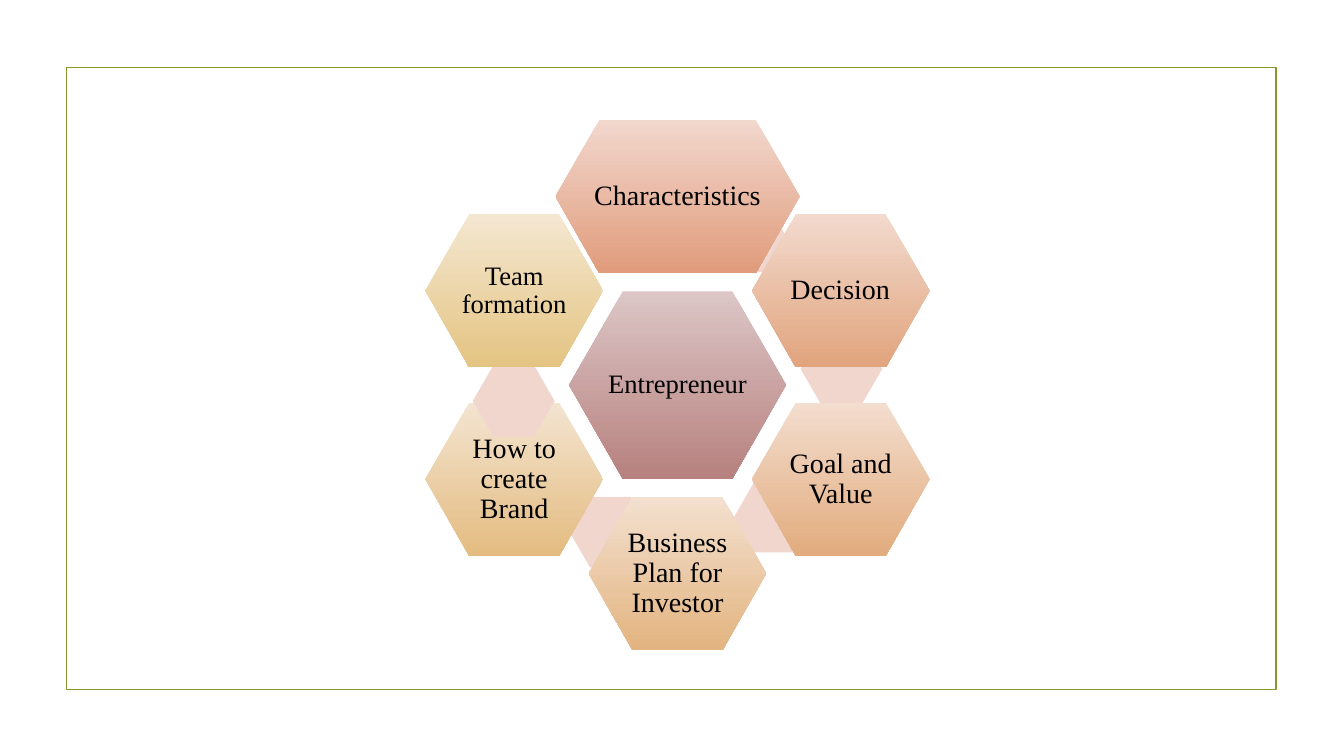
import math
from dataclasses import dataclass

from pptx import Presentation
from pptx.dml.color import RGBColor
from pptx.enum import shapes, text
from pptx.util import Inches, Pt

FONT = "Times New Roman"
CENTER_X, CENTER_Y = 6.72, 3.82
RING_RADIUS = 1.87
TOPIC_HEIGHT = 1.52
ACCENT_SIZE = (0.81, 0.7)


@dataclass
class Topic:
    label: str
    top_color: str
    bottom_color: str
    accent_at: tuple[float, float]
    width: float = 1.76
    size: float = 20


# Clockwise from the top of the ring
TOPICS = [
    Topic("Characteristics", "F2D7CD", "E09C7C", (6.99, 2.0), width=2.42),
    Topic("Decision\t", "F2DACE", "E1A47D", (7.94, 3.31)),
    Topic("Goal and Value", "F3DDCE", "E2AC7E", (7.28, 4.78)),
    Topic("Business Plan for Investor", "F3E0CF", "E3B480", (5.65, 4.93)),
    Topic("How to create Brand", "F3E4D0", "E4BC81", (4.69, 3.63)),
    Topic("Team formation", "F4E7D1", "E4C482", (4.22 + 0.47, 3.63), size=19),
]


def rgb(value: str) -> RGBColor:
    return RGBColor.from_string(value)


def add_shape(slide, kind, x: float, y: float, w: float, h: float):
    sp = slide.shapes.add_shape(kind, Inches(x), Inches(y), Inches(w), Inches(h))
    sp.shadow.inherit = False
    return sp


def add_hexagon(slide, x: float, y: float, w: float, h: float,
                colors: list[str], adj: float = 0.286):
    """Draw a borderless hexagon: one colour is solid, two run top to bottom."""
    sp = add_shape(slide, shapes.MSO_SHAPE.HEXAGON, x, y, w, h)
    sp.adjustments[0] = adj
    sp.line.fill.background()
    if len(colors) == 1:
        sp.fill.solid()
        sp.fill.fore_color.rgb = rgb(colors[0])
    else:
        sp.fill.gradient()
        sp.fill.gradient_angle = 270
        for stop, position, color in zip(sp.fill.gradient_stops, (0, 1), colors):
            stop.position = position
            stop.color.rgb = rgb(color)
    return sp


def set_text(sp, label: str, *, size: float, color: str = "000000") -> None:
    tf = sp.text_frame
    tf.word_wrap = True
    tf.vertical_anchor = text.MSO_ANCHOR.MIDDLE
    tf.margin_left = tf.margin_right = Inches(0.03)
    tf.margin_top = tf.margin_bottom = Inches(0.03)
    p = tf.paragraphs[0]
    p.alignment = text.PP_ALIGN.CENTER
    p.line_spacing = 0.9
    r = p.add_run()
    r.text = label
    r.font.name = FONT
    r.font.size = Pt(size)
    r.font.color.rgb = rgb(color)


def add_labelled_hexagon(slide, label: str, cx: float, cy: float, w: float, h: float,
                         colors: list[str], size: float) -> None:
    sp = add_hexagon(slide, cx - w / 2, cy - h / 2, w, h, colors)
    set_text(sp, label, size=size)


def add_frame(slide) -> None:
    sp = add_shape(slide, shapes.MSO_SHAPE.RECTANGLE, 0.66, 0.67, 12, 6.17)
    sp.fill.background()
    sp.line.color.rgb = rgb("83992A")
    sp.line.width = Pt(1.25)


def add_ring(slide) -> None:
    """Place the topics every 60 degrees, each above its pale accent hexagon."""
    accents_drawn = set()
    for i, topic in enumerate(TOPICS):
        if topic.accent_at not in accents_drawn:
            add_hexagon(slide, *topic.accent_at, *ACCENT_SIZE, ["F1D6CD"], adj=0.289)
            accents_drawn.add(topic.accent_at)
        angle = math.radians(60 * i)
        add_labelled_hexagon(
            slide, topic.label,
            CENTER_X + RING_RADIUS * math.sin(angle),
            CENTER_Y - RING_RADIUS * math.cos(angle),
            topic.width, TOPIC_HEIGHT,
            [topic.top_color, topic.bottom_color], topic.size)


def main() -> None:
    prs = Presentation()
    prs.slide_width, prs.slide_height = Inches(13.33), Inches(7.5)
    s = prs.slides.add_slide(prs.slide_layouts[6])
    add_frame(s)
    add_labelled_hexagon(s, "Entrepreneur", CENTER_X, CENTER_Y, 2.15, 1.86,
                         ["DCC6C6", "B7817F"], 19)
    add_ring(s)
    prs.save("out.pptx")


if __name__ == "__main__":
    main()
